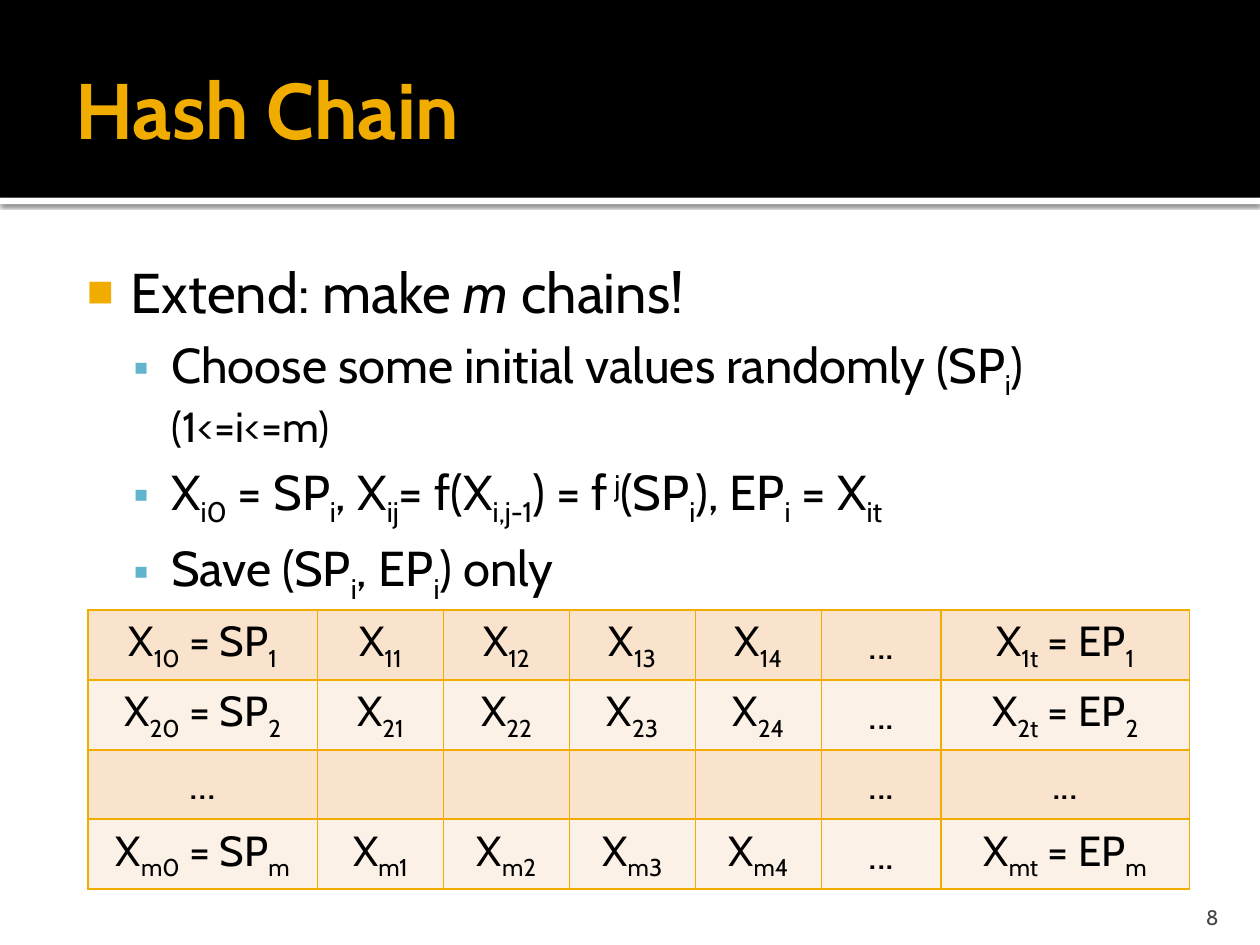
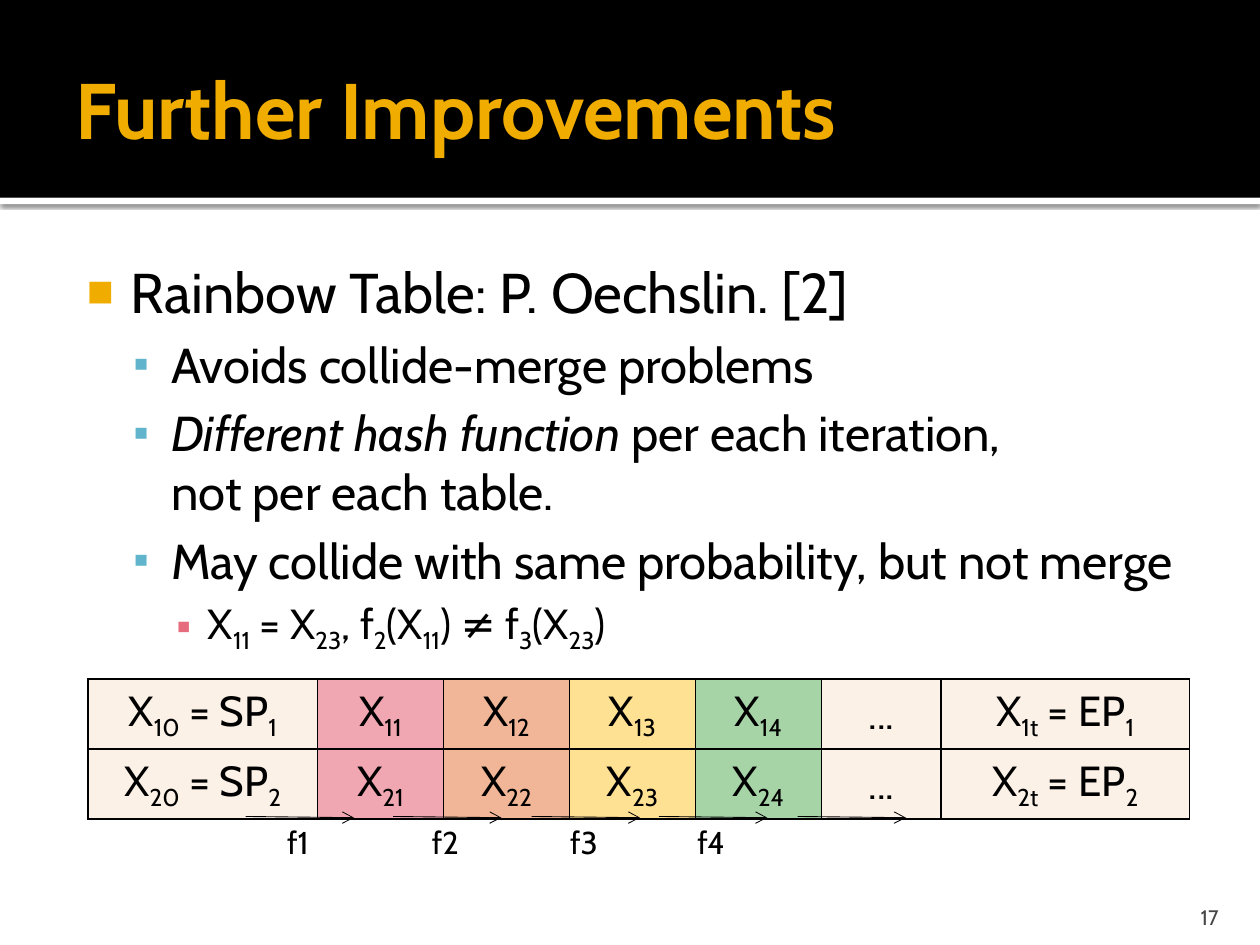
from lxml import etree
from pptx import Presentation
from pptx.dml.color import RGBColor
from pptx.enum import shapes, text
from pptx.oxml import ns
from pptx.util import Inches, Pt

FONT = "Cabin"
COLORS = {
    "black": "000000", "white": "FFFFFF", "amber": "F0AD00", "blue": "60B5CC",
    "rose": "E66C7D", "gray": "454545", "peach": "F9E3CC", "cream": "FCF1E7",
    "pink": "F0A7B1", "orange": "F1B697", "yellow": "FFE193", "green": "A6D4A7",
}
LEVELS = [
    {"size": 32, "left": 0.48, "hanging": 0.35, "before": 0, "bullet": "■", "color": "amber", "percent": 80},
    {"size": 28, "left": 0.8, "hanging": 0.3, "before": 5.6, "bullet": "▪", "color": "blue", "percent": 90},
    {"size": 24, "left": 1.09, "hanging": 0.25, "before": 4.8, "bullet": "▪", "color": "rose", "percent": 100},
]
MARKS = {
    "~": {"baseline": "-25000"},
    "^": {"baseline": "30000"},
    "*": {"i": "1"},
    "|": {"sz": "2400"},
}
COLUMN_WIDTHS = [1.82, 1, 1, 1, 1, 0.95, 1.97]
ROW_HEIGHT = 0.55


def color(name):
    return RGBColor.from_string(COLORS[name])


def apply(target, values):
    for name, value in values.items():
        setattr(target, name, value)


def add_xml(parent, tag, **attributes):
    return etree.SubElement(parent, ns.qn(tag), attributes)


def add_color_xml(parent, name):
    return add_xml(parent, "a:srgbClr", val=COLORS[name])


def split_marks(markup):
    pieces, mark, words = [], None, ""
    for letter in markup:
        if letter in MARKS:
            pieces.append((words, mark))
            mark, words = (None if mark == letter else letter), ""
        else:
            words += letter
    pieces.append((words, mark))
    return [piece for piece in pieces if piece[0]]


def write(paragraph, markup, size, color_name="black", bold=False):
    for words, mark in split_marks(markup):
        for index, line in enumerate(words.split("\n")):
            if index:
                paragraph.add_line_break()
            run = paragraph.add_run()
            run.text = line
            apply(run.font, {"name": FONT, "size": Pt(size), "bold": bold})
            run.font.color.rgb = color(color_name)
            for name, value in MARKS.get(mark, {}).items():
                run._r.get_or_add_rPr().set(name, value)


def add_text_box(parent, box, anchor, margins=(0.1, 0.05, 0.1, 0.05)):
    frame = parent.shapes.add_textbox(*map(Inches, box)).text_frame
    left, top, right, bottom = map(Inches, margins)
    apply(frame, {
        "word_wrap": True, "vertical_anchor": anchor, "margin_left": left,
        "margin_top": top, "margin_right": right, "margin_bottom": bottom,
    })
    return frame


def add_band(slide, top, height, color_name):
    band = slide.shapes.add_shape(
        shapes.MSO_SHAPE.RECTANGLE, 0, Inches(top), Inches(10), Inches(height))
    band.fill.solid()
    band.fill.fore_color.rgb = color(color_name)
    band.line.fill.background()
    band.shadow.inherit = False
    return band


def add_shadow(shape):
    effects = shape._element.spPr.find(ns.qn("a:effectLst"))
    shadow = add_xml(effects, "a:outerShdw", blurRad=str(Pt(2.5)), dist=str(Pt(0.8)),
                     dir="5400000", algn="tl", rotWithShape="0")
    add_xml(add_color_xml(shadow, "black"), "a:alpha", val="60000")


def add_base_slide(presentation, title, number):
    slide = presentation.slides.add_slide(presentation.slide_layouts[6])
    add_shadow(add_band(slide, 1.57, 0.05, "white"))
    add_band(slide, 0, 1.57, "black")
    heading = add_text_box(slide, (0.5, 0.17, 9, 1.37), text.MSO_ANCHOR.MIDDLE,
                           (0.1, 0.05, 0.05, 0.05))
    write(heading.paragraphs[0], title, 45, "amber", True)
    footer = add_text_box(slide, (8.97, 7.08, 0.8, 0.3), text.MSO_ANCHOR.BOTTOM,
                          (0.1, 0.05, 0.1, 0))
    footer.paragraphs[0].alignment = text.PP_ALIGN.RIGHT
    write(footer.paragraphs[0], str(number), 12, "gray")
    return slide


def set_bullet(paragraph, level):
    style = LEVELS[level]
    apply(paragraph, {"level": level, "space_before": Pt(style["before"])})
    properties = paragraph._p.get_or_add_pPr()
    properties.set("marL", str(Inches(style["left"])))
    properties.set("indent", str(-Inches(style["hanging"])))
    add_color_xml(add_xml(properties, "a:buClr"), style["color"])
    add_xml(properties, "a:buSzPct", val=str(style["percent"] * 1000))
    add_xml(properties, "a:buFont", typeface="Arial")
    add_xml(properties, "a:buChar", char=style["bullet"])


def add_bullets(slide, items):
    frame = add_text_box(slide, (0.5, 1.94, 9, 5.06), text.MSO_ANCHOR.TOP,
                         (0.06, 0.1, 0.1, 0.05))
    for index, (level, markup) in enumerate(items):
        paragraph = frame.add_paragraph() if index else frame.paragraphs[0]
        set_bullet(paragraph, level)
        write(paragraph, markup, LEVELS[level]["size"])


def chain_row(chain):
    return [f"X~{chain}0~ = SP~{chain}~",
            *[f"X~{chain}{step}~" for step in range(1, 5)],
            "...", f"X~{chain}t~ = EP~{chain}~"]


def format_cell(cell, markup, fill_name, border_name):
    properties = cell._tc.get_or_add_tcPr()
    for side in ("a:lnL", "a:lnR", "a:lnT", "a:lnB"):
        border = add_xml(properties, side, w=str(Pt(1)))
        add_color_xml(add_xml(border, "a:solidFill"), border_name)
    cell.fill.solid()
    cell.fill.fore_color.rgb = color(fill_name)
    cell.vertical_anchor = text.MSO_ANCHOR.MIDDLE
    paragraph = cell.text_frame.paragraphs[0]
    paragraph.alignment = text.PP_ALIGN.CENTER
    write(paragraph, markup, 24)


def add_chain_table(slide, top, rows, fills, border_name):
    table = slide.shapes.add_table(
        len(rows), len(COLUMN_WIDTHS), Inches(0.7), Inches(top),
        Inches(sum(COLUMN_WIDTHS)), Inches(ROW_HEIGHT * len(rows))).table
    apply(table, {"first_row": False, "horz_banding": False})
    for column, width in zip(table.columns, COLUMN_WIDTHS):
        column.width = Inches(width)
    for row_index, row in enumerate(rows):
        table.rows[row_index].height = Inches(ROW_HEIGHT)
        for column_index, markup in enumerate(row):
            format_cell(table.cell(row_index, column_index), markup,
                        fills[row_index][column_index], border_name)


def add_arrow(parent, left):
    arrow = parent.shapes.add_connector(
        shapes.MSO_CONNECTOR.STRAIGHT, Inches(left), Inches(6.48),
        Inches(left + 0.86), Inches(6.49))
    arrow.line.color.rgb = color("black")
    arrow.line.width = Pt(0.5)
    add_xml(arrow.line._get_or_add_ln(), "a:tailEnd", type="arrow")
    add_xml(arrow._element.spPr, "a:effectLst")


def add_function_step(slide, left, label):
    group = slide.shapes.add_group_shape()
    frame = add_text_box(group, (left + 0.2, 6.48, 0.43, 0.4), text.MSO_ANCHOR.MIDDLE)
    frame.word_wrap = False
    frame.paragraphs[0].alignment = text.PP_ALIGN.CENTER
    write(frame.paragraphs[0], label, 18)
    add_arrow(group, left)


def build_hash_chain(presentation):
    slide = add_base_slide(presentation, "Hash Chain", 8)
    add_bullets(slide, [
        (0, "Extend: make *m* chains!"),
        (1, "Choose some initial values randomly (SP~i~) |(1<=i<=m)|"),
        (1, "X~i0~ = SP~i~, X~ij~= f(X~i,j-1~) = f^ j^(SP~i~), EP~i~ = X~it~"),
        (1, "Save (SP~i~, EP~i~) only"),
    ])
    gap_row = ["...", "", "", "", "", "...", "..."]
    rows = [chain_row(1), chain_row(2), gap_row, chain_row("m")]
    fills = [[name] * len(COLUMN_WIDTHS) for name in ("peach", "cream") * 2]
    add_chain_table(slide, 4.84, rows, fills, "amber")


def build_improvements(presentation):
    slide = add_base_slide(presentation, "Further Improvements", 17)
    add_bullets(slide, [
        (0, "Rainbow Table: P. Oechslin. [2]"),
        (1, "Avoids collide-merge problems"),
        (1, "*Different hash function *per each iteration,\nnot per each table."),
        (1, "May collide with same probability, but not merge"),
        (2, "X~11~ = X~23~, f~2~(X~11~) ≠ f~3~(X~23~)"),
    ])
    column_fills = ["cream", "pink", "orange", "yellow", "green", "cream", "cream"]
    add_chain_table(slide, 5.39, [chain_row(1), chain_row(2)], [column_fills] * 2, "black")
    for number, left in enumerate((1.95, 3.12, 4.22, 5.23), 1):
        add_function_step(slide, left, f"f{number}")
    add_arrow(slide, 6.33)


def main():
    presentation = Presentation()
    apply(presentation, {"slide_width": Inches(10), "slide_height": Inches(7.5)})
    build_hash_chain(presentation)
    build_improvements(presentation)
    presentation.save("out.pptx")


if __name__ == "__main__":
    main()
